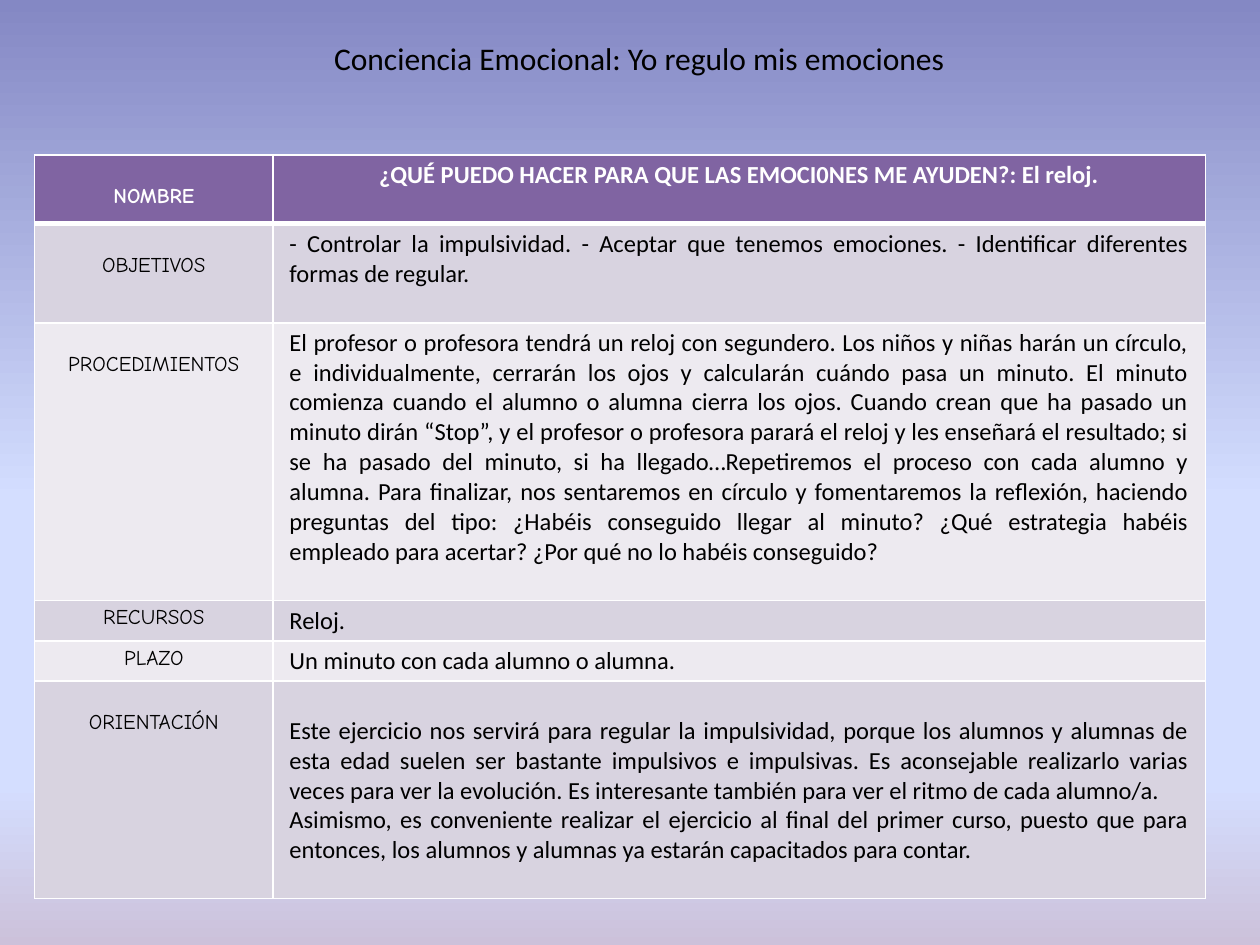
import pptx
import pptx.util
import pptx.dml.color
import pptx.enum.text
import pptx.oxml.ns
import lxml.etree

Pt = pptx.util.Pt
qn = pptx.oxml.ns.qn
sub = lxml.etree.SubElement
align = pptx.enum.text.PP_ALIGN
hues = {"head": "8064A2", "dark": "D8D3E0", "light": "EDEAF0",
        "white": "FFFFFF", "black": "000000"}
stops = [(0, "8488C4"), (53, "D4DEFF"), (83, "D4DEFF"), (100, "CCC1DA")]


def rgb(name):
    return pptx.dml.color.RGBColor.from_string(hues[name])


def edge(cell, side, width):
    props = cell._tc.get_or_add_tcPr()
    line = sub(props, qn("a:ln" + side), w=str(Pt(width)))
    fill = sub(line, qn("a:solidFill"))
    sub(fill, qn("a:srgbClr"), val=hues["white"])


deck = pptx.Presentation()
deck.slide_width, deck.slide_height = Pt(720), Pt(540)
slide = deck.slides.add_slide(deck.slide_layouts[6])

# Background gradient, top to bottom
back = slide.background.fill
back.gradient()
back.gradient_angle = 270
ramp = next(slide.element.iter(qn("a:gsLst")))
for stop in list(ramp):
    ramp.remove(stop)
for place, hue in stops:
    stop = sub(ramp, qn("a:gs"), pos=str(place * 1000))
    sub(stop, qn("a:srgbClr"), val=hue)

# Activity table: height, label drop, text drop, label, paragraphs
rows = [
    (39.4, 13.8, 0, "NOMBRE",
     ["¿QUÉ PUEDO HACER PARA QUE LAS EMOCI0NES ME AYUDEN?: El reloj."]),
    (56.6, 13.8, 0, "OBJETIVOS",
     ["- Controlar la impulsividad. - Aceptar que tenemos emociones. "
      "- Identificar diferentes formas de regular."]),
    (158.8, 13.8, 0, "PROCEDIMIENTOS",
     ["El profesor o profesora tendrá un reloj con segundero. Los niños y niñas "
      "harán un círculo, e individualmente, cerrarán los ojos y calcularán cuándo "
      "pasa un minuto. El minuto comienza cuando el alumno o alumna cierra los "
      "ojos. Cuando crean que ha pasado un minuto dirán “Stop”, y el profesor o "
      "profesora parará el reloj y les enseñará el resultado; si se ha pasado del "
      "minuto, si ha llegado…Repetiremos el proceso con cada alumno y alumna. Para "
      "finalizar, nos sentaremos en círculo y fomentaremos la reflexión, haciendo "
      "preguntas del tipo: ¿Habéis conseguido llegar al minuto? ¿Qué estrategia "
      "habéis empleado para acertar? ¿Por qué no lo habéis conseguido? "]),
    (22.4, 0, 0, "RECURSOS", ["Reloj."]),
    (22.8, 0, 0, "PLAZO", ["Un minuto con cada alumno o alumna."]),
    (124.2, 13.8, 17, "ORIENTACIÓN",
     ["Este ejercicio nos servirá para regular la impulsividad, porque los alumnos "
      "y alumnas de esta edad suelen ser bastante impulsivos e impulsivas. Es "
      "aconsejable realizarlo varias veces para ver la evolución. Es interesante "
      "también para ver el ritmo de cada alumno/a. ",
      "Asimismo, es conveniente realizar el ejercicio al final del primer curso, "
      "puesto que para entonces, los alumnos y alumnas ya estarán capacitados "
      "para contar."]),
]
high = sum(row[0] for row in rows)
table = slide.shapes.add_table(len(rows), 2, Pt(19.8), Pt(88.5),
                               Pt(669), Pt(high)).table
table.columns[0].width, table.columns[1].width = Pt(136.2), Pt(532.8)

for i, (tall, drop, gap, label, paras) in enumerate(rows):
    table.rows[i].height = Pt(tall)
    shade = "head" if i == 0 else "dark" if i % 2 else "light"
    parts = [([label], drop, "Comic Neue", 12, align.CENTER),
             (paras, gap, "Calibri", 14, align.JUSTIFY if i else align.CENTER)]
    for j, (lines, lead, face, size, side) in enumerate(parts):
        cell = table.cell(i, j)
        cell.margin_left = cell.margin_right = Pt(9.4)
        cell.margin_top, cell.margin_bottom = Pt(3 + lead), Pt(3)
        for mark, width in zip("LRTB", (1, 1, 3 if i == 1 else 1, 1 if i else 3)):
            edge(cell, mark, width)
        cell.fill.solid()
        cell.fill.fore_color.rgb = rgb(shade)
        cell.text = "\n".join(lines)
        for para in cell.text_frame.paragraphs:
            para.alignment = side
            para.font.name, para.font.size = face, Pt(size)
            para.font.bold = i == 0
            para.font.color.rgb = rgb("black" if i else "white")

# Title
box = slide.shapes.add_textbox(Pt(167), Pt(18.7), Pt(396.7), Pt(29))
box.text_frame.word_wrap = True
para = box.text_frame.paragraphs[0]
para.text = "Conciencia Emocional: Yo regulo mis emociones"
para.alignment = align.CENTER
para.font.name, para.font.size = "Calibri", Pt(18)
para.font.color.rgb = rgb("black")

deck.save("out.pptx")
